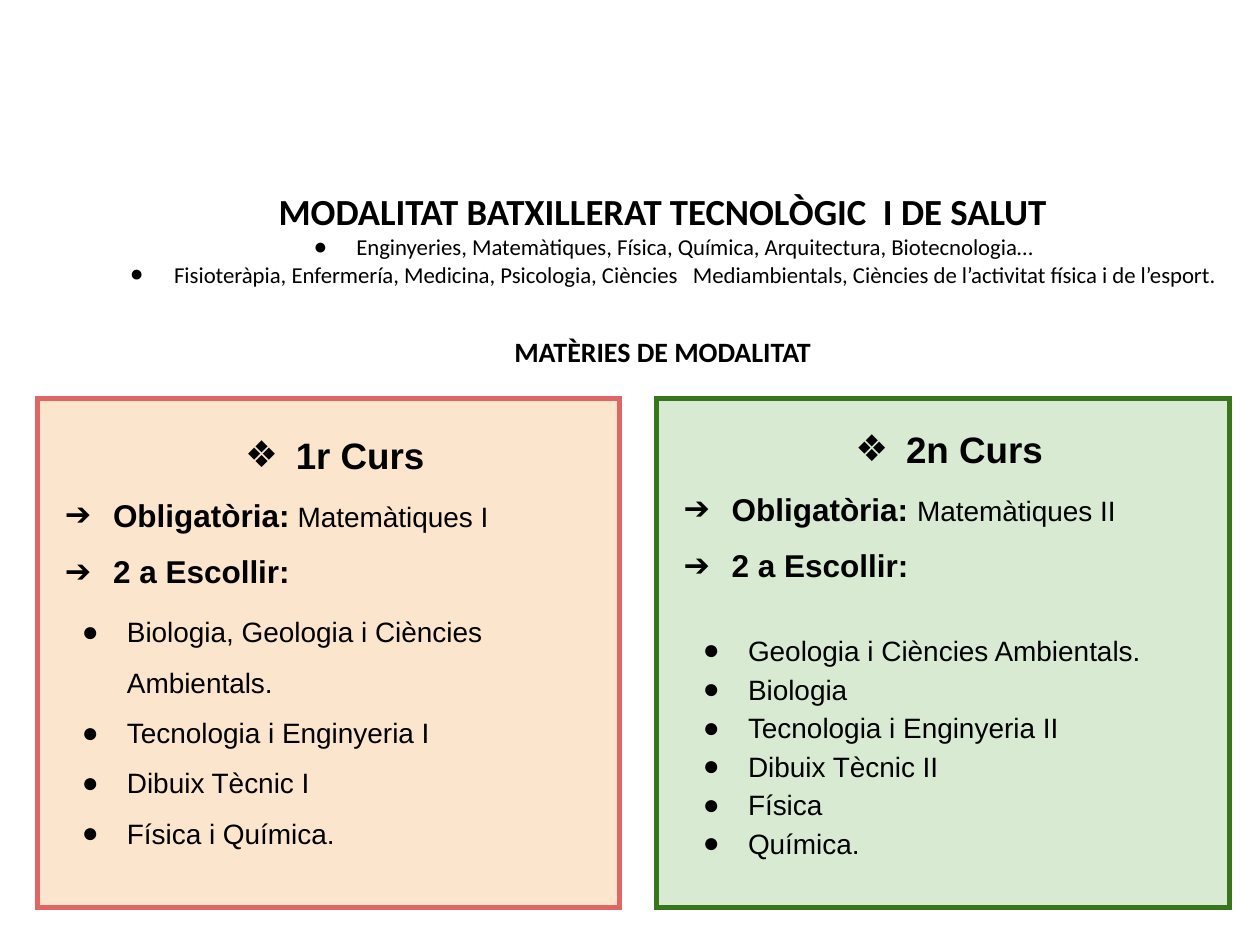
from dataclasses import dataclass

from lxml import etree
from pptx import Presentation
from pptx.dml.color import RGBColor
from pptx.enum.shapes import MSO_SHAPE
from pptx.enum.text import MSO_ANCHOR, MSO_AUTO_SIZE, PP_ALIGN
from pptx.oxml.ns import qn
from pptx.util import Cm, Pt

RECTANGLE = MSO_SHAPE.RECTANGLE
TOP, MIDDLE = MSO_ANCHOR.TOP, MSO_ANCHOR.MIDDLE
NO_AUTOFIT = MSO_AUTO_SIZE.NONE
LEFT, CENTER = PP_ALIGN.LEFT, PP_ALIGN.CENTER

TITLE_ONLY = 5
HEADING_FONT, COURSE_FONT = "Calibri", "Arial"
BLACK = "000000"
DOT, ARROW, DIAMOND = "●", "➔", "❖"

# Text sizes and line widths in points
TITLE_SIZE, LABEL_SIZE, BODY_SIZE, FIELD_SIZE = 21, 18, 16, 13
BORDER_WIDTH = 3

# Lengths in centimetres
TEXT_INDENT = 1.27
SIDE_INSET = 0.25
PANEL_TOP, PANEL_HEIGHT = 8.03, 10.26


@dataclass
class Piece:
    text: str
    size: float
    bold: bool = False


@dataclass
class Line:
    """A paragraph; hang is how far its bullet stands left of the text."""
    pieces: list[Piece]
    align: PP_ALIGN = LEFT
    bullet: str = ""
    hang: float = 0.91
    spacing: float = 1.0
    before: float = 0


@dataclass
class Box:
    left: float
    top: float
    width: float
    height: float


@dataclass
class Course:
    name: str
    compulsory: list[Piece]
    options: list[str]
    panel: Box
    options_box: Box
    fill: str
    border: str
    panel_inset: float
    option_spacing: float


HEADING_BOX = Box(1.93, 4.11, 22.86, 2.67)
HEADING_LINES = [
    Line([Piece("MODALITAT BATXILLERAT TECNOLÒGIC  I DE SALUT", TITLE_SIZE, True)], CENTER),
    Line([Piece("Enginyeries, Matemàtiques, Física, Química, Arquitectura, "
                "Biotecnologia…", FIELD_SIZE)], CENTER, DOT, hang=0.86),
    Line([Piece("Fisioteràpia, Enfermería, Medicina, Psicologia, Ciències   "
                "Mediambientals, Ciències de l’activitat física i de l’esport.",
                FIELD_SIZE)], CENTER, DOT, hang=0.89),
    Line([Piece("MATÈRIES DE MODALITAT", BODY_SIZE, True)], CENTER, before=27),
]

COURSES = [
    Course(
        name="2n Curs",
        compulsory=[Piece("Obligatòria: ", LABEL_SIZE, True),
                    Piece("Matemàtiques II", BODY_SIZE)],
        options=["Geologia i Ciències Ambientals.", "Biologia",
                 "Tecnologia i Enginyeria II", "Dibuix Tècnic II", "Física", "Química."],
        panel=Box(13.23, PANEL_TOP, 11.56, PANEL_HEIGHT),
        options_box=Box(13.56, 12.42, 10.44, 5.13),
        fill="D9EAD3", border="38761D", panel_inset=0.13, option_spacing=1.15),
    Course(
        name="1r Curs",
        compulsory=[Piece("Obligatòria:", LABEL_SIZE, True),
                    Piece(" ", BODY_SIZE, True),
                    Piece("Matemàtiques I", BODY_SIZE)],
        options=["Biologia, Geologia i Ciències Ambientals.",
                 "Tecnologia i Enginyeria I", "Dibuix Tècnic I", "Física i Química."],
        panel=Box(0.76, PANEL_TOP, 11.73, PANEL_HEIGHT),
        options_box=Box(1.04, 11.81, 11.15, 5.31),
        fill="FCE5CD", border="E06666", panel_inset=0.25, option_spacing=1.5),
]


def rgb(value: str) -> RGBColor:
    return RGBColor.from_string(value)


def add_bullet(paragraph, line: Line) -> None:
    properties = paragraph._p.get_or_add_pPr()
    properties.set("marL", str(Cm(TEXT_INDENT)))
    properties.set("indent", str(-Cm(line.hang)))
    color = etree.SubElement(properties, qn("a:buClr"))
    etree.SubElement(color, qn("a:srgbClr"), val=BLACK)
    etree.SubElement(properties, qn("a:buFont"), typeface=COURSE_FONT)
    etree.SubElement(properties, qn("a:buChar"), char=line.bullet)


def write_lines(frame, lines: list[Line], font_name: str) -> None:
    for index, line in enumerate(lines):
        paragraph = frame.add_paragraph() if index else frame.paragraphs[0]
        if line.bullet:
            add_bullet(paragraph, line)
        paragraph.alignment = line.align
        paragraph.line_spacing = line.spacing
        paragraph.space_before = Pt(line.before)
        for piece in line.pieces:
            run = paragraph.add_run()
            run.text = piece.text
            run.font.name = font_name
            run.font.size = Pt(piece.size)
            run.font.bold = piece.bold
            run.font.color.rgb = rgb(BLACK)


def set_frame(frame, anchor: MSO_ANCHOR, top_inset: float, bottom_inset: float) -> None:
    frame.word_wrap = True
    frame.auto_size = NO_AUTOFIT
    frame.vertical_anchor = anchor
    frame.margin_left = frame.margin_right = Cm(SIDE_INSET)
    frame.margin_top, frame.margin_bottom = Cm(top_inset), Cm(bottom_inset)


def add_panel(slide, box: Box, fill: str, inset: float, lines: list[Line],
              border: str = "") -> None:
    """Draw a filled rectangle with text; an empty border means no outline."""
    panel = slide.shapes.add_shape(
        RECTANGLE, Cm(box.left), Cm(box.top), Cm(box.width), Cm(box.height))
    panel.shadow.inherit = False
    panel.fill.solid()
    panel.fill.fore_color.rgb = rgb(fill)
    if border:
        panel.line.color.rgb = rgb(border)
        panel.line.width = Pt(BORDER_WIDTH)
        outline = panel._element.spPr.find(qn("a:ln"))
        etree.SubElement(outline, qn("a:miter"), lim="800000")
    else:
        panel.line.fill.background()
    set_frame(panel.text_frame, TOP, inset, inset)
    write_lines(panel.text_frame, lines, COURSE_FONT)


def add_course(slide, course: Course) -> None:
    summary = [
        Line([Piece(course.name, TITLE_SIZE, True)], CENTER, DIAMOND, hang=1.02, spacing=1.5),
        Line(course.compulsory, LEFT, ARROW, hang=0.97, spacing=1.5),
        Line([Piece("2 a Escollir:", LABEL_SIZE, True)], LEFT, ARROW, hang=0.97, spacing=1.5),
    ]
    options = [Line([Piece(option, BODY_SIZE)], bullet=DOT, spacing=course.option_spacing)
               for option in course.options]
    add_panel(slide, course.panel, course.fill, course.panel_inset, summary, course.border)
    add_panel(slide, course.options_box, course.fill, SIDE_INSET, options)


def add_heading(slide) -> None:
    heading = slide.shapes.title
    heading.left, heading.top = Cm(HEADING_BOX.left), Cm(HEADING_BOX.top)
    heading.width, heading.height = Cm(HEADING_BOX.width), Cm(HEADING_BOX.height)
    set_frame(heading.text_frame, MIDDLE, top_inset=0.48, bottom_inset=0.13)
    write_lines(heading.text_frame, HEADING_LINES, HEADING_FONT)


def main() -> None:
    presentation = Presentation()
    presentation.slide_width, presentation.slide_height = Cm(25.4), Cm(19.05)
    slide = presentation.slides.add_slide(presentation.slide_layouts[TITLE_ONLY])
    add_heading(slide)
    for course in COURSES:
        add_course(slide, course)
    presentation.save("out.pptx")


if __name__ == "__main__":
    main()
